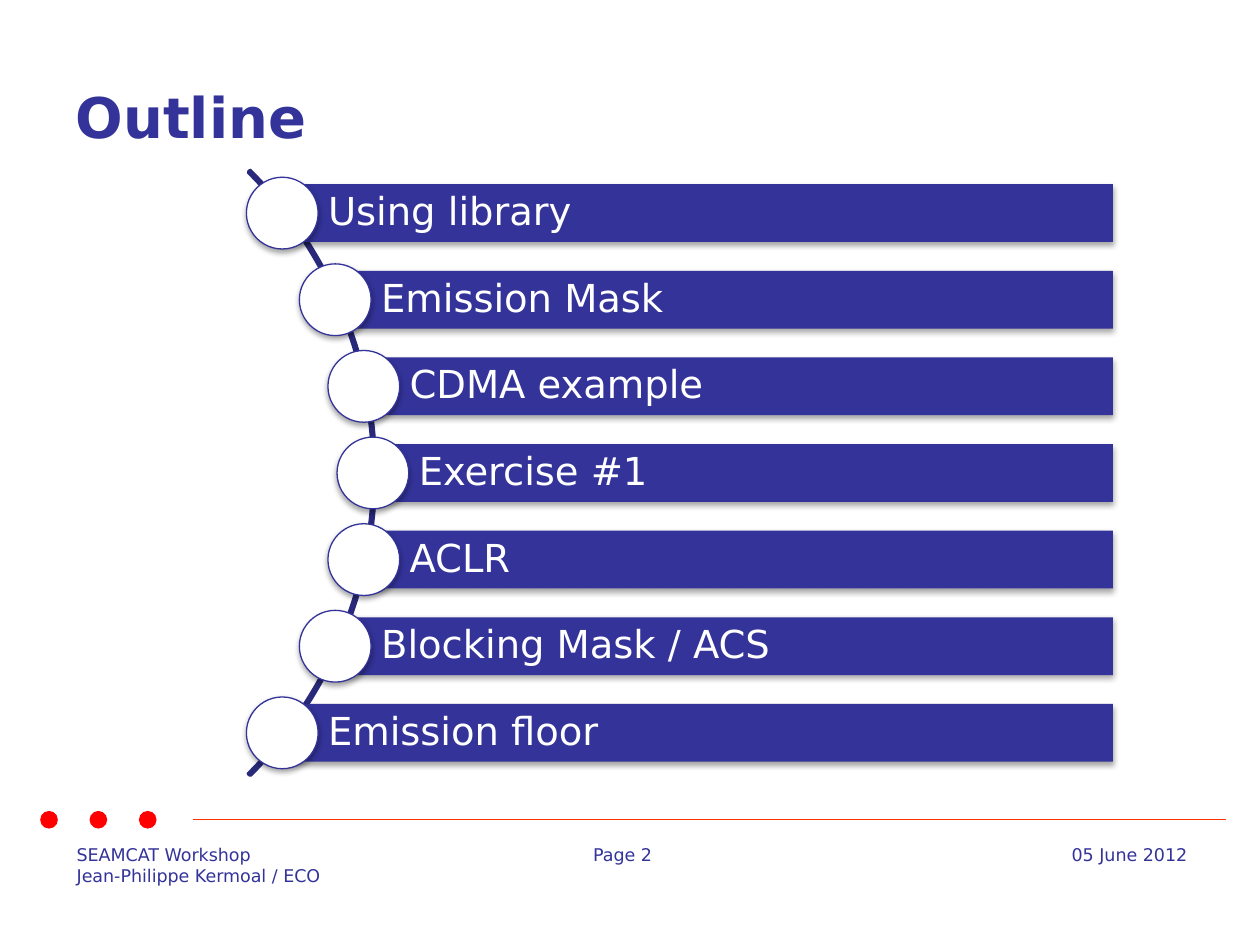
from math import sqrt

from lxml import etree
from pptx import Presentation
from pptx.dml.color import RGBColor
from pptx.enum.shapes import MSO_CONNECTOR, MSO_SHAPE
from pptx.enum.text import MSO_ANCHOR, MSO_AUTO_SIZE, PP_ALIGN
from pptx.oxml.ns import qn
from pptx.util import Pt

LEFT, RIGHT = PP_ALIGN.LEFT, PP_ALIGN.RIGHT
MIDDLE = MSO_ANCHOR.MIDDLE
NO_FIT = MSO_AUTO_SIZE.NONE
RECT, OVAL, ARC = MSO_SHAPE.RECTANGLE, MSO_SHAPE.OVAL, MSO_SHAPE.BLOCK_ARC
STRAIGHT = MSO_CONNECTOR.STRAIGHT

FONT = "DejaVu Sans"
COLORS = {"blue": "333399", "navy": "29297B", "white": "FFFFFF",
          "red": "FF0000", "orange": "FF3300", "black": "000000"}
TOPICS = ["Using library", "Emission Mask", "CDMA example", "Exercise #1",
          "ACLR", "Blocking Mask / ACS", "Emission floor"]

MID = 270.3        # height of the middle topic
STEP = 49.5        # from one topic to the next
BEND = 238.8       # radius of the curve the topics follow
PEAK = 213.1       # furthest right the curve reaches
BAR_END = 636
BAR_HIGH = 33
KNOB = 41


def color(name):
    return RGBColor.from_string(COLORS[name])


def style(frame, size, tint, align=LEFT, bold=False):
    for para in frame.paragraphs:
        para.alignment = align
        for run in para.runs:
            font = run.font
            font.name, font.size, font.bold = FONT, Pt(size), bold
            font.color.rgb = color(tint)


def add_shape(slide, kind, box, fill=None, line=None, width=0.75):
    shape = slide.shapes.add_shape(kind, *map(Pt, box))
    shape.shadow.inherit = False
    if fill:
        shape.fill.solid()
        shape.fill.fore_color.rgb = color(fill)
    else:
        shape.fill.background()
    if line:
        shape.line.color.rgb = color(line)
        shape.line.width = Pt(width)
    else:
        shape.line.fill.background()
    return shape


def add_shadow(shape):
    """Cast a soft shadow straight down."""
    effects = shape._element.spPr.find(qn("a:effectLst"))
    outer = etree.SubElement(effects, qn("a:outerShdw"), blurRad="40000",
                             dist="23000", dir="5400000", rotWithShape="0")
    tint = etree.SubElement(outer, qn("a:srgbClr"), val=COLORS["black"])
    etree.SubElement(tint, qn("a:alpha"), val="35000")


def add_title(slide, text):
    title = slide.shapes.title
    title.left, title.top, title.width, title.height = map(
        Pt, (36, 21.6, 648, 90))
    frame = title.text_frame
    frame.text = text
    frame.auto_size = NO_FIT
    frame.vertical_anchor = MIDDLE
    style(frame, 32, "blue", bold=True)


def add_note(slide, text, left, width, high, align=LEFT):
    box = slide.shapes.add_textbox(Pt(left), Pt(478.8), Pt(width), Pt(high))
    frame = box.text_frame
    frame.word_wrap = True
    frame.text = text
    style(frame, 10, "blue", align)


def add_rule(slide):
    rule = slide.shapes.add_connector(
        STRAIGHT, Pt(110.2), Pt(468.5), Pt(700.5), Pt(468.5))
    rule.line.color.rgb = color("orange")
    rule.line.width = Pt(0.75)
    etree.SubElement(rule._element.spPr, qn("a:effectLst"))


def add_footer(slide):
    add_note(slide, "SEAMCAT Workshop\nJean-Philippe Kermoal / ECO",
             36.7, 159, 31)
    add_note(slide, "Page 2", 331.9, 59, 19.4)
    add_note(slide, "05 June 2012", 569.5, 116, 19.4, RIGHT)
    add_rule(slide)
    for i in range(3):
        add_shape(slide, OVAL, (23 + 28.2 * i, 463.4, 10.1, 10.1), "red")


def add_arc(slide):
    size = 488.9
    arc = add_shape(slide, ARC, (-274.3, MID - size / 2, size, size),
                    line="navy", width=2)
    for i, value in enumerate((189, 27, 0.003)):
        arc.adjustments[i] = value


def add_topic(slide, text, shift):
    """Add a bar and its knob, shift points below the middle of the curve."""
    left = PEAK - BEND + sqrt(BEND ** 2 - shift ** 2)
    y = MID + shift
    bar = add_shape(slide, RECT, (left, y - BAR_HIGH / 2,
                                  BAR_END - left, BAR_HIGH), "blue")
    add_shadow(bar)
    frame = bar.text_frame
    frame.word_wrap = True
    frame.vertical_anchor = MIDDLE
    frame.margin_left = Pt(26.2)
    frame.margin_top = frame.margin_right = frame.margin_bottom = Pt(4.4)
    frame.text = text
    frame.paragraphs[0].line_spacing = 0.9
    style(frame, 22, "white")
    knob = add_shape(slide, OVAL, (left - KNOB / 2, y - KNOB / 2, KNOB, KNOB),
                     "white", "blue")
    add_shadow(knob)


def main():
    deck = Presentation()
    deck.slide_width, deck.slide_height = Pt(720), Pt(540)
    slide = deck.slides.add_slide(deck.slide_layouts[5])
    add_footer(slide)
    add_title(slide, "Outline")
    add_arc(slide)
    for i, text in enumerate(TOPICS):
        add_topic(slide, text, (i - len(TOPICS) // 2) * STEP)
    deck.save("out.pptx")


if __name__ == "__main__":
    main()
